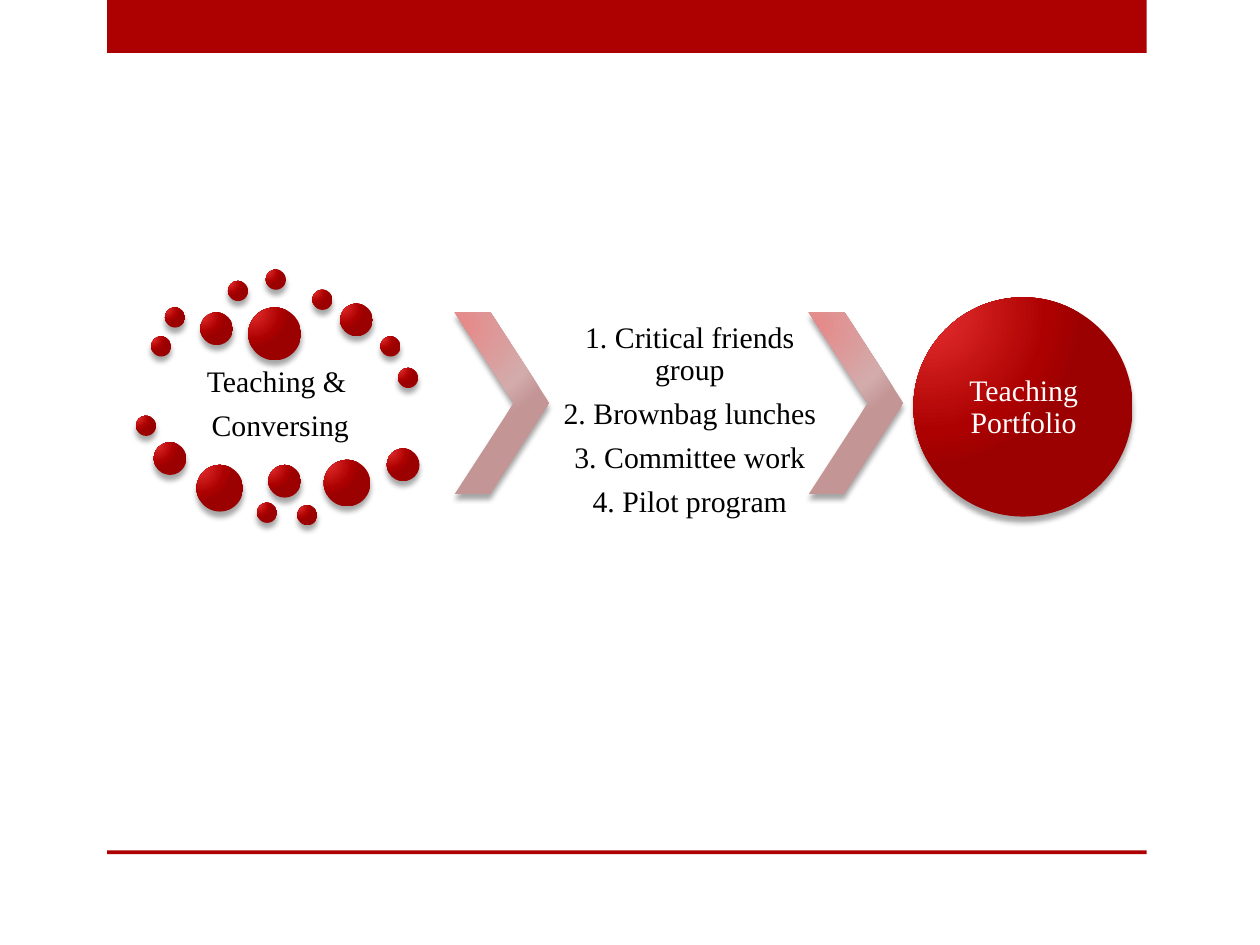
from lxml import etree
from pptx import Presentation
from pptx.dml.color import RGBColor
from pptx.enum.shapes import MSO_SHAPE
from pptx.enum.text import MSO_ANCHOR, PP_ALIGN
from pptx.oxml import parse_xml
from pptx.oxml.ns import qn
from pptx.util import Inches, Pt

RECT, OVAL, CHEVRON = MSO_SHAPE.RECTANGLE, MSO_SHAPE.OVAL, MSO_SHAPE.CHEVRON
TOP, MIDDLE = MSO_ANCHOR.TOP, MSO_ANCHOR.MIDDLE
CENTER = PP_ALIGN.CENTER
DRAWING_NS = "http://schemas.openxmlformats.org/drawingml/2006/main"

FONT, FONT_SIZE = "Times New Roman", 17
RED, BLACK, WHITE = "AD0101", "000000", "FFFFFF"
RED_STOPS = ((0, "E62F2F"), (76, RED), (100, "9C0101"))
PINK_STOPS = ((0, "E68989"), (76, "D3ABAB"), (100, "C39595"))

# Diameter of the dots, then the left and top of each one
DOTS = {
    0.16: ((1.2, 2.67), (1.31, 2.44), (1.81, 2.23), (2.11, 2.14), (2.48, 2.3),
           (3.02, 2.67), (3.16, 2.92), (1.08, 3.3), (2.04, 3.99), (2.36, 4.01)),
    0.26: ((1.59, 2.48), (2.7, 2.41), (1.22, 3.51), (2.13, 3.69), (3.07, 3.56)),
    0.37: ((1.56, 3.69), (2.57, 3.65)),
    0.42: ((1.97, 2.44),),
}
STEPS = ("1. Critical friends group", "2. Brownbag lunches",
         "3. Committee work", "4. Pilot program")


def rgb(color):
    return RGBColor.from_string(color)


def add_shape(slide, kind, x, y, w, h):
    s = slide.shapes.add_shape(kind, Inches(x), Inches(y), Inches(w), Inches(h))
    s.line.fill.background()
    s.shadow.inherit = False
    return s


def add_bar(slide, y, h):
    s = add_shape(slide, RECT, 0.85, y, 8.25, h)
    s.fill.solid()
    s.fill.fore_color.rgb = rgb(RED)


def add_glossy(slide, kind, x, y, w, h, stops):
    """Add a shape with a radial gradient lit from the top left and a soft shadow."""
    s = add_shape(slide, kind, x, y, w, h)
    s.fill.background()
    gs = "".join(f'<a:gs pos="{pos * 1000}"><a:srgbClr val="{color}"/></a:gs>'
                 for pos, color in stops)
    gradient = parse_xml(
        f'<a:gradFill xmlns:a="{DRAWING_NS}" rotWithShape="1"><a:gsLst>{gs}</a:gsLst>'
        '<a:path path="circle"><a:fillToRect l="15000" t="15000" r="100000" b="100000"/>'
        '</a:path></a:gradFill>')
    sp_pr = s._element.spPr
    sp_pr.replace(sp_pr.find(qn("a:noFill")), gradient)
    shadow = etree.SubElement(
        sp_pr.find(qn("a:effectLst")), qn("a:outerShdw"), blurRad=str(Pt(3)),
        dist=str(Pt(3)), dir="5400000", rotWithShape="0")
    color = etree.SubElement(shadow, qn("a:srgbClr"), val=BLACK)
    etree.SubElement(color, qn("a:alpha"), val="35000")
    return s


def add_chevron(slide, x):
    s = add_glossy(slide, CHEVRON, x, 2.48, 0.75, 1.44, PINK_STOPS)
    s.adjustments[0] = 0.623


def add_text(slide, x, y, w, h, lines, color=BLACK, anchor=MIDDLE, inset=0.02):
    tf = slide.shapes.add_textbox(Inches(x), Inches(y), Inches(w), Inches(h)).text_frame
    tf.word_wrap = True
    tf.vertical_anchor = anchor
    tf.margin_left = tf.margin_right = Inches(inset)
    tf.margin_top = tf.margin_bottom = Inches(inset)
    for i, line in enumerate(lines):
        p = tf.add_paragraph() if i else tf.paragraphs[0]
        p.alignment = CENTER
        p.line_spacing = 0.9
        p.space_after = Pt(6.8)
        r = p.add_run()
        r.text = line
        r.font.name = FONT
        r.font.size = Pt(FONT_SIZE)
        r.font.color.rgb = rgb(color)


def main():
    prs = Presentation()
    prs.slide_width, prs.slide_height = Inches(10), Inches(7.5)
    slide = prs.slides.add_slide(prs.slide_layouts[6])

    add_bar(slide, 0, 0.42)
    add_bar(slide, 6.75, 0.03)

    add_text(slide, 0.84, 2.7, 2.77, 1.02, ("Teaching & ", "Conversing"))
    for size, places in DOTS.items():
        for x, y in places:
            add_glossy(slide, OVAL, x, y, size, size, RED_STOPS)

    add_chevron(slide, 3.61)
    add_text(slide, 4.45, 2.54, 2.05, 1.6, STEPS, anchor=TOP)
    add_chevron(slide, 6.42)

    add_glossy(slide, OVAL, 7.25, 2.36, 1.74, 1.74, RED_STOPS)
    add_text(slide, 7.51, 2.62, 1.23, 1.23, ("Teaching Portfolio",), WHITE, inset=0)

    prs.save("out.pptx")


if __name__ == "__main__":
    main()
